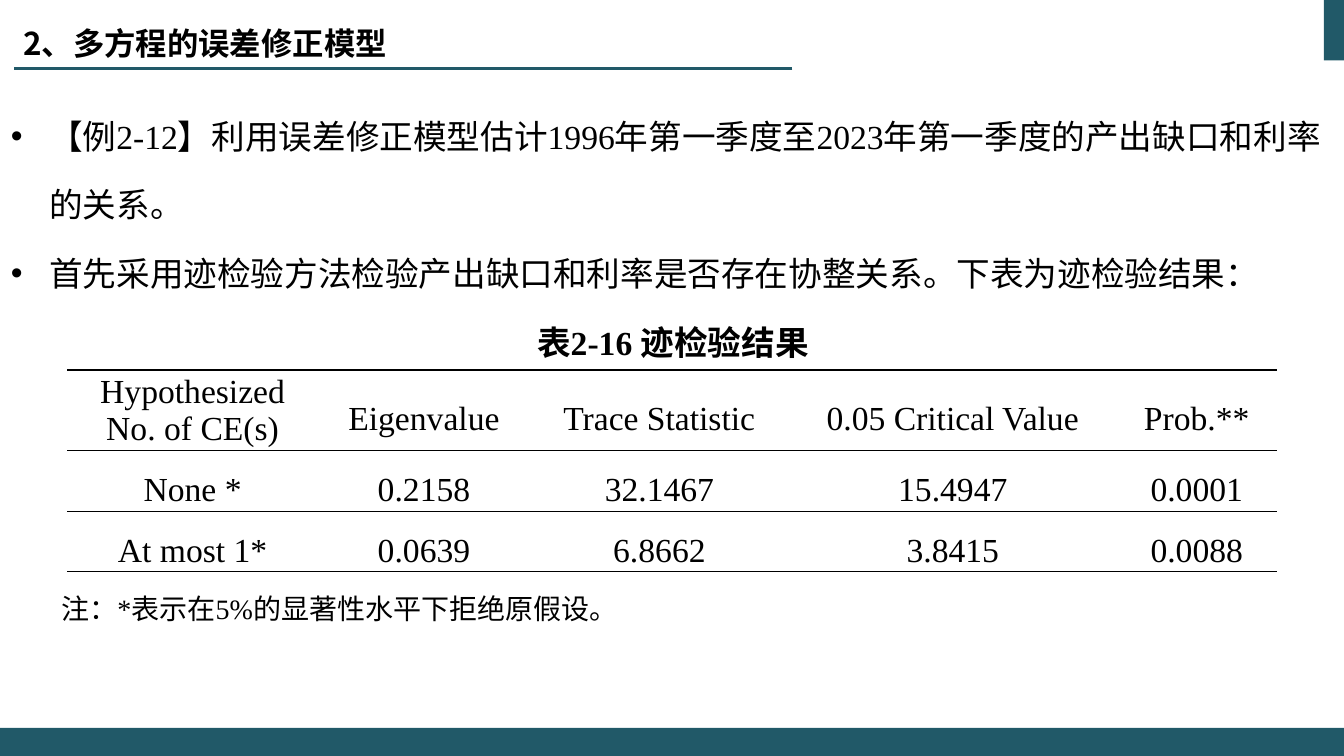
"""Build a slide on the multi-equation error correction model with its trace test table."""
from lxml.etree import SubElement
from pptx import Presentation
from pptx.dml.color import RGBColor
from pptx.enum.shapes import MSO_CONNECTOR as Connector, MSO_SHAPE as Shape
from pptx.enum.text import MSO_ANCHOR as Anchor, MSO_AUTO_SIZE as AutoSize, PP_ALIGN as Align
from pptx.oxml.ns import qn
from pptx.util import Inches, Pt

TITLE = "2、多方程的误差修正模型"
BULLETS = [
    "【例2-12】利用误差修正模型估计1996年第一季度至2023年第一季度的产出缺口和利率的关系。",
    "首先采用迹检验方法检验产出缺口和利率是否存在协整关系。下表为迹检验结果：",
]
CAPTION = "表2-16 迹检验结果"
NOTE = "注：*表示在5%的显著性水平下拒绝原假设。"
TRACE_TEST = [
    ["Hypothesized\nNo. of CE(s)", "Eigenvalue", "Trace Statistic", "0.05 Critical Value", "Prob.**"],
    ["None *", "0.2158", "32.1467", "15.4947", "0.0001"],
    ["At most 1*", "0.0639", "6.8662", "3.8415", "0.0088"],
]
COLORS = {"teal": "215968", "black": "000000"}
SERIF, SANS = "Times New Roman", "Noto Sans CJK SC"

WIDTH, HEIGHT = 13.33, 7.5
COLUMNS = [2.49, 2.1, 2.57, 3.25, 1.59]
ROWS = [0.8, 0.6, 0.6]
TABLE_LEFT, TABLE_TOP = (WIDTH - sum(COLUMNS)) / 2, 3.67
TAB_WIDTH, TAB_HEIGHT = 0.2, 0.6
FOOTER_HEIGHT = 0.28
HANGING = 0.38
TABLE_GAP = 147
PLAIN_TABLE = "{2D5ABB26-0587-4C30-8999-92F81FD0307C}"


def color(name):
    return RGBColor.from_string(COLORS[name])


def write(paragraph, text, size=24, font=SERIF, bold=False, align=Align.LEFT, spacing=1.0,
          before=0, margin=0, indent=0, bullet=None, small_caps=False):
    properties = paragraph._p.get_or_add_pPr()
    properties.set("marL", str(Inches(margin)))
    properties.set("indent", str(Inches(indent)))
    if bullet:
        SubElement(properties, qn("a:buFont")).set("typeface", "Arial")
        SubElement(properties, qn("a:buChar")).set("char", bullet)
    paragraph.alignment = align
    paragraph.line_spacing = spacing
    paragraph.space_before = Pt(before)
    run = paragraph.add_run()
    run.text = text
    run.font.name, run.font.size, run.font.bold = font, Pt(size), bold
    run.font.color.rgb = color("black")
    run_properties = run._r.get_or_add_rPr()
    SubElement(run_properties, qn("a:ea")).set("typeface", SANS)
    if small_caps:
        run_properties.set("cap", "small")


def add_bar(slide, left, top, width, height):
    bar = slide.shapes.add_shape(Shape.RECTANGLE, *map(Inches, (left, top, width, height)))
    bar.shadow.inherit = False
    bar.fill.solid()
    bar.fill.fore_color.rgb = color("teal")
    bar.line.fill.background()


def add_frame(slide):
    add_bar(slide, WIDTH - TAB_WIDTH, 0, TAB_WIDTH, TAB_HEIGHT)
    rule = slide.shapes.add_connector(Connector.STRAIGHT, *map(Inches, (7.86, 0.68, 0.14, 0.68)))
    rule.line.color.rgb = color("teal")
    rule.line.width = Pt(1.5)
    SubElement(rule._element.spPr, qn("a:effectLst"))
    add_bar(slide, 0, HEIGHT - FOOTER_HEIGHT, WIDTH, FOOTER_HEIGHT)


def add_title(slide):
    title = slide.shapes.title
    title.left, title.top, title.width, title.height = map(Inches, (0.13, -0.03, 5.12, 0.85))
    frame = title.text_frame
    frame.auto_size = AutoSize.NONE
    frame.vertical_anchor = Anchor.MIDDLE
    write(frame.paragraphs[0], TITLE, size=28, font=SANS, bold=True, small_caps=True)


def add_body(slide):
    frame = slide.shapes.add_textbox(*map(Inches, (0.01, 0.82, WIDTH, 5.5))).text_frame
    frame.word_wrap = True
    frame.auto_size = AutoSize.SHAPE_TO_FIT_TEXT
    entries = [(text, {"margin": HANGING, "indent": -HANGING, "bullet": "•"}) for text in BULLETS]
    entries.append((CAPTION, {"align": Align.CENTER, "bold": True}))
    entries.append((NOTE, {"size": 20, "indent": 0.5, "before": TABLE_GAP}))
    for index, (text, style) in enumerate(entries):
        paragraph = frame.add_paragraph() if index else frame.paragraphs[0]
        write(paragraph, text, spacing=1.7, **style)


def add_border(cell, side):
    line = SubElement(cell._tc.get_or_add_tcPr(), qn(f"a:{side}"), w=str(Pt(1)))
    fill = SubElement(line, qn("a:solidFill"))
    SubElement(fill, qn("a:srgbClr")).set("val", COLORS["black"])


def add_table(slide):
    places = map(Inches, (TABLE_LEFT, TABLE_TOP, sum(COLUMNS), sum(ROWS)))
    table = slide.shapes.add_table(len(ROWS), len(COLUMNS), *places).table
    table.first_row = table.horz_banding = False
    table._tbl.tblPr.find(qn("a:tableStyleId")).text = PLAIN_TABLE
    for column, width in zip(table.columns, COLUMNS):
        column.width = Inches(width)
    borders = [["lnT", "lnB"], ["lnT"], ["lnB"]]
    for row, height, values, sides in zip(table.rows, ROWS, TRACE_TEST, borders):
        row.height = Inches(height)
        for cell, value in zip(row.cells, values):
            cell.margin_left = cell.margin_right = Inches(0.07)
            cell.margin_top = cell.margin_bottom = 0
            cell.vertical_anchor = Anchor.MIDDLE
            lines = value.split("\n")
            for index, line in enumerate(lines):
                paragraph = cell.text_frame.add_paragraph() if index else cell.text_frame.paragraphs[0]
                write(paragraph, line, align=Align.CENTER, spacing=1.5 if len(lines) == 1 else 1.0)
            for side in sides:
                add_border(cell, side)
            cell.fill.background()


def main():
    presentation = Presentation()
    presentation.slide_width, presentation.slide_height = Inches(WIDTH), Inches(HEIGHT)
    slide = presentation.slides.add_slide(presentation.slide_layouts[5])
    add_frame(slide)
    add_title(slide)
    add_body(slide)
    add_table(slide)
    presentation.save("out.pptx")


if __name__ == "__main__":
    main()
